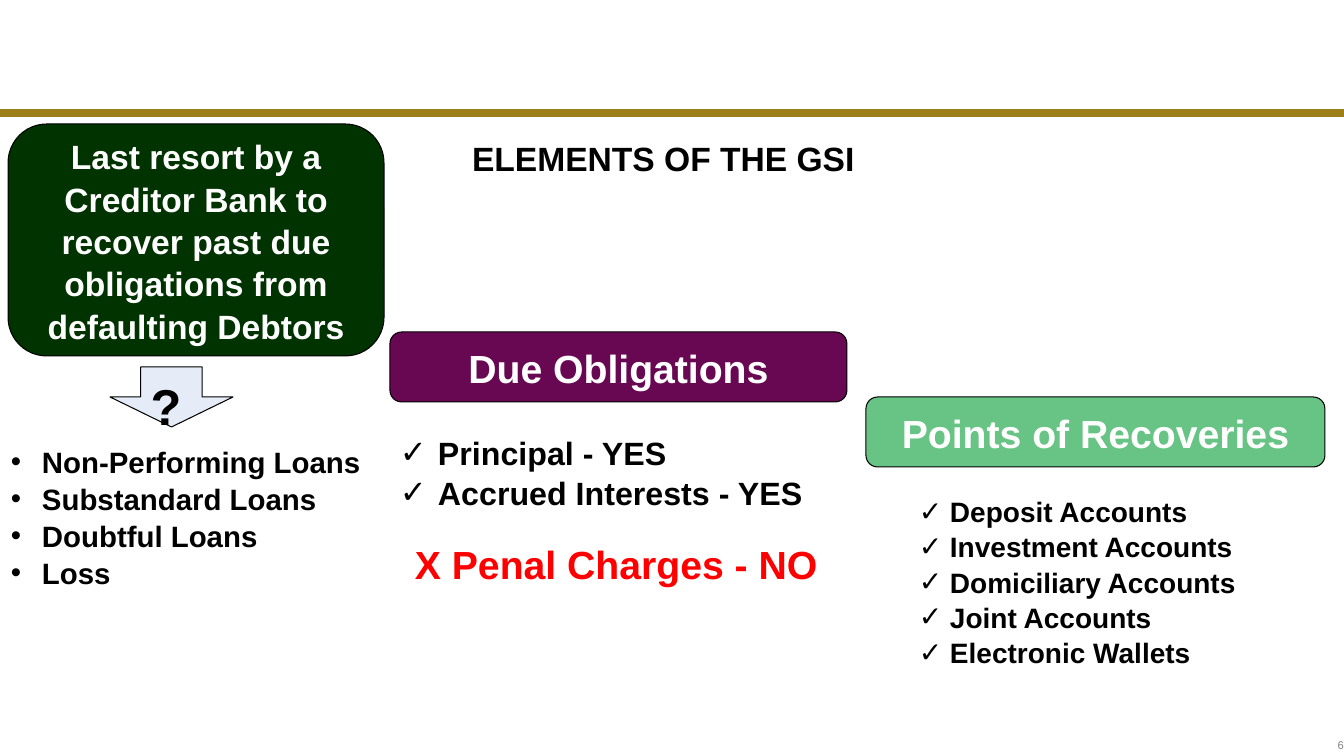
"""Build the slide on the elements of the GSI."""
from lxml.etree import SubElement
from pptx import Presentation
from pptx.dml.color import RGBColor
from pptx.enum.shapes import MSO_CONNECTOR as CONNECTOR, MSO_SHAPE as SHAPE
from pptx.enum.text import MSO_ANCHOR as ANCHOR, MSO_AUTO_SIZE as AUTO, PP_ALIGN as ALIGN
from pptx.oxml.ns import qn
from pptx.util import Pt

PX = 914400 / 100.8
COLORS = {"gold": "9C7F18", "forest": "003300", "ice": "E5ECF7", "plum": "680853",
          "mint": "68C484", "red": "FF0000", "gray": "808080", "black": "000000",
          "white": "FFFFFF"}


def emu(*lengths):
    return [round(length * PX) for length in lengths]


def write(frame, lines, size, color="black", align=ALIGN.LEFT, anchor=ANCHOR.TOP,
          wrap=True, bullet=None, indent=0):
    left, top = emu(10, 5)
    layout = {"word_wrap": wrap, "auto_size": AUTO.NONE, "vertical_anchor": anchor,
              "margin_left": left, "margin_right": left,
              "margin_top": top, "margin_bottom": top}
    for key, value in layout.items():
        setattr(frame, key, value)
    frame.text = "\n".join(lines)
    for paragraph in frame.paragraphs:
        paragraph.alignment = align
        paragraph.line_spacing = 1.05
        if bullet:
            properties = paragraph._p.get_or_add_pPr()
            hang = emu(indent)[0]
            properties.set("marL", str(hang))
            properties.set("indent", str(-hang))
            SubElement(properties, qn("a:buFont")).set("typeface", "Arial")
            SubElement(properties, qn("a:buChar")).set("char", bullet)
        font = paragraph.runs[0].font
        for key, value in {"name": "Arial", "size": Pt(size), "bold": color != "gray"}.items():
            setattr(font, key, value)
        font.color.rgb = RGBColor.from_string(COLORS[color])


deck = Presentation()
deck.slide_width, deck.slide_height = emu(1344, 756)
slide = deck.slides.add_slide(deck.slide_layouts[5])

heading = slide.shapes.title
heading.left, heading.top, heading.width, heading.height = emu(462, 131, 406, 50)
write(heading.text_frame, ["ELEMENTS OF THE GSI"], 24, wrap=False)

rule = slide.shapes.add_connector(CONNECTOR.STRAIGHT, *emu(0, 113, 1344, 113))
rule.line.color.rgb = RGBColor.from_string(COLORS["gold"])
rule.line.width = Pt(6)
SubElement(rule._element.spPr, qn("a:effectLst"))

label = {"color": "white", "align": ALIGN.CENTER, "anchor": ANCHOR.MIDDLE}
panels = [
    (SHAPE.ROUNDED_RECTANGLE, (8, 124, 376, 232), "forest",
     "Last resort by a Creditor Bank to recover past due obligations from defaulting Debtors",
     24, label),
    (SHAPE.DOWN_ARROW, (110, 367, 123, 60), "ice", "?", 36, {}),
    (SHAPE.ROUNDED_RECTANGLE, (390, 332, 457, 70), "plum", "Due Obligations", 28, label),
    (SHAPE.ROUNDED_RECTANGLE, (866, 397, 459, 70), "mint", "Points of Recoveries", 28, label),
]
for kind, place, fill, words, size, style in panels:
    panel = slide.shapes.add_shape(kind, *emu(*place))
    panel.shadow.inherit = False
    panel.fill.solid()
    panel.fill.fore_color.rgb = RGBColor.from_string(COLORS[fill])
    panel.line.color.rgb = RGBColor.from_string(COLORS["black"])
    panel.line.width = Pt(0.75)
    write(panel.text_frame, [words], size, **style)

notes = [
    ((1, 437, 383, 152),
     ["Non-Performing Loans", "Substandard Loans", "Doubtful Loans", "Loss"],
     21, {"bullet": "•", "indent": 31}),
    ((390, 426, 427, 92), ["Principal - YES", "Accrued Interests - YES"],
     23, {"bullet": "✓", "indent": 38}),
    ((405, 533, 427, 57), ["X Penal Charges - NO"], 28, {"color": "red", "wrap": False}),
    ((909, 488, 340, 179),
     ["Deposit Accounts", "Investment Accounts", "Domiciliary Accounts",
      "Joint Accounts", "Electronic Wallets"],
     20, {"bullet": "✓", "indent": 31, "wrap": False}),
    ((1041, 733, 313, 24), ["6"], 8, {"color": "gray", "align": ALIGN.RIGHT}),
]
for place, lines, size, style in notes:
    note = slide.shapes.add_textbox(*emu(*place))
    write(note.text_frame, lines, size, **style)

deck.save("out.pptx")
